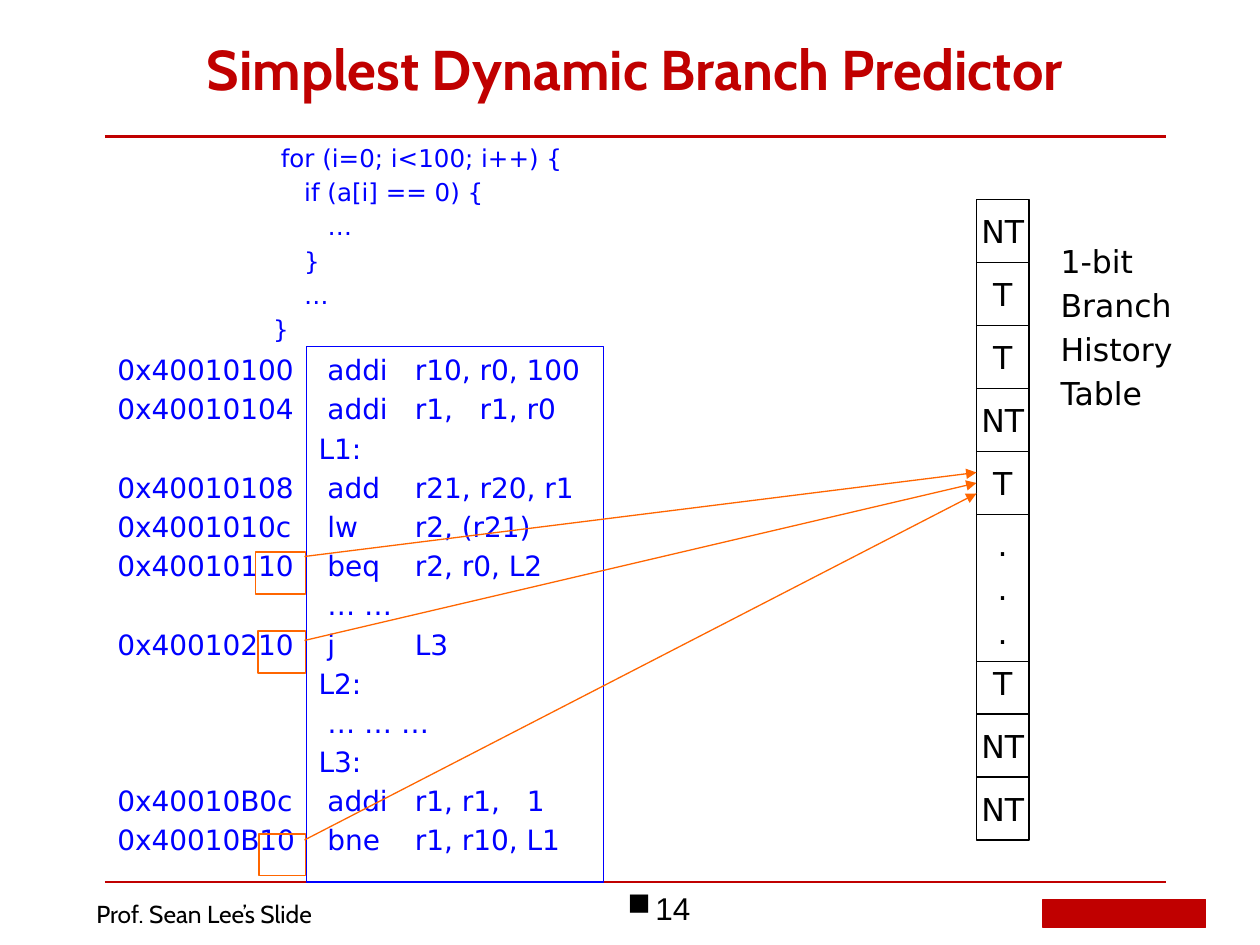
from lxml import etree
from pptx import Presentation
from pptx import util as u
from pptx.dml.color import RGBColor
from pptx.enum import shapes, text
from pptx.oxml import ns

RED = RGBColor(0xC0, 0x00, 0x00)
BLUE = RGBColor(0x00, 0x00, 0xFF)
ORANGE = RGBColor(0xFF, 0x66, 0x00)
BLACK = RGBColor(0x00, 0x00, 0x00)
WHITE = RGBColor(0xFF, 0xFF, 0xFF)

BODY = "DejaVu Sans"
HEADING = "Cabin"
LINE_HEIGHT = 1.2
SPACING = 0.2
SPACE_WIDTH = 4.45
CODE_SIZE = 16
CODE_TABS = (55, 92, 119)
TABLE_LEFT, CELL_WIDTH, CELL_HEIGHT = 558, 30, 36

LOOP = [(1, "for (i=0; i<100; i++) {"), (4, "if (a[i] == 0) {"), (7, "…"),
        (4, "}"), (4, "…"), (0, "}")]
INSTRUCTIONS = [
    " addi\tr10, r0, 100", " addi\tr1,\tr1, r0", "L1:", " add\tr21, r20, r1",
    " lw\tr2, (r21)", " beq\tr2, r0, L2", " … …", " j\tL3", "L2:", " … … …",
    "L3:", " addi\tr1, r1,\t1", " bne\tr1, r10, L1"]
ADDRESSES = {0: "0x40010100", 1: "0x40010104", 3: "0x40010108", 4: "0x4001010c",
             5: "0x40010110", 7: "0x40010210", 11: "0x40010B0c", 12: "0x40010B10"}
BRANCHES = [((146, 315.5, 28.5, 24), 318, 270),
            ((147.5, 360.5, 27, 24), 366, 276),
            ((148, 476.5, 26.5, 24), 480, 282)]


def add_child(parent, tag, **attributes):
    return etree.SubElement(parent, ns.qn(tag), attributes)


def write(shape, lines, size, color, font=BODY, bold=False, align=text.PP_ALIGN.LEFT):
    frame = shape.text_frame
    frame.word_wrap = True
    for index, line in enumerate(lines):
        paragraph = frame.paragraphs[0] if index == 0 else frame.add_paragraph()
        paragraph.text = line
        paragraph.alignment = align
        paragraph.space_before = u.Pt(round(SPACING * size, 2) if index else 0)
        paragraph.font.name = font
        paragraph.font.size = u.Pt(size)
        paragraph.font.bold = bold
        paragraph.font.color.rgb = color
    return frame


def add_text(slide, box, lines, size, color, **style):
    shape = slide.shapes.add_textbox(*map(u.Pt, box))
    return write(shape, lines, size, color, **style)


def add_box(slide, box, line_color, fill=None):
    shape = slide.shapes.add_shape(shapes.MSO_SHAPE.RECTANGLE, *map(u.Pt, box))
    shape.shadow.inherit = False
    if fill is None:
        shape.fill.background()
    else:
        shape.fill.solid()
        shape.fill.fore_color.rgb = fill
    shape.line.color.rgb = line_color
    shape.line.width = u.Pt(0.75)
    return shape


def add_cell(slide, top, lines, height=CELL_HEIGHT):
    shape = add_box(slide, (TABLE_LEFT, top, CELL_WIDTH, height), BLACK, WHITE)
    frame = write(shape, lines, 18, BLACK, align=text.PP_ALIGN.CENTER)
    frame.margin_left = frame.margin_right = 0
    frame.vertical_anchor = text.MSO_ANCHOR.MIDDLE


def add_line(slide, ends, color, width, arrow=False):
    line = slide.shapes.add_connector(shapes.MSO_CONNECTOR.STRAIGHT, *map(u.Pt, ends))
    line.line.color.rgb = color
    line.line.width = u.Pt(width)
    if arrow:
        add_child(line.line._get_or_add_ln(), "a:tailEnd", type="triangle")
    add_child(line._element.spPr, "a:effectLst")


def add_history_table(slide):
    for index, state in enumerate(["NT", "T", "T", "NT", "T"]):
        add_cell(slide, 114 + index * CELL_HEIGHT, [state])
    for index, state in enumerate(["T", "NT", "NT"]):
        add_cell(slide, 372 + index * CELL_HEIGHT, [state])
    add_cell(slide, 294, ["."] * 3, 84)
    add_text(slide, (599, 134.5, 86, 107), ["1-bit", "Branch", "History", "Table"],
             18, BLACK)


def add_loop(slide):
    frame = add_text(slide, (149, 78, 235.5, 126), [line for _, line in LOOP], 14, BLUE)
    for paragraph, (spaces, _) in zip(frame.paragraphs, LOOP):
        properties = paragraph._p.get_or_add_pPr()
        properties.set("marL", str(u.Pt(spaces * SPACE_WIDTH)))
        properties.set("indent", "0")


def add_instructions(slide):
    shape = add_box(slide, (175, 198, 170, 306), BLUE)
    frame = write(shape, INSTRUCTIONS, CODE_SIZE, BLUE)
    frame.vertical_anchor = text.MSO_ANCHOR.TOP
    for paragraph in frame.paragraphs:
        properties = paragraph._p.get_or_add_pPr()
        tabs = etree.Element(ns.qn("a:tabLst"))
        properties.find(ns.qn("a:defRPr")).addprevious(tabs)
        for position in CODE_TABS:
            add_child(tabs, "a:tab", pos=str(u.Pt(position)), algn="l")


def add_addresses(slide):
    frame = add_text(slide, (60, 198, 138, 306), ADDRESSES.values(), CODE_SIZE, BLUE)
    rows = list(ADDRESSES)
    for paragraph, previous, row in zip(frame.paragraphs[1:], rows, rows[1:]):
        skipped = (row - previous - 1) * (LINE_HEIGHT + SPACING)
        paragraph.space_before = u.Pt(round((skipped + SPACING) * CODE_SIZE, 2))


def add_page_number(slide):
    frame = add_text(slide, (262.5, 504.5, 228, 36), ["14"], 18, BLACK, font="Arial",
                     align=text.PP_ALIGN.CENTER)
    properties = frame.paragraphs[0]._p.get_or_add_pPr()
    properties.set("marL", str(u.Pt(16)))
    properties.set("indent", str(-u.Pt(16)))
    bullet = etree.Element(ns.qn("a:buChar"), char="■")
    properties.find(ns.qn("a:defRPr")).addprevious(bullet)


def main():
    """Build the branch predictor slide."""
    presentation = Presentation()
    presentation.slide_width, presentation.slide_height = u.Pt(720), u.Pt(540)
    slide = presentation.slides.add_slide(presentation.slide_layouts[6])
    for top in (78, 504):
        add_line(slide, (60, top, 666, top), RED, 1.5)
    add_box(slide, (596, 514, 93, 16), RED, RED)
    add_page_number(slide)
    title = add_text(slide, (60, 6, 606, 66), ["Simplest Dynamic Branch Predictor"],
                     32, RED, font=HEADING, bold=True, align=text.PP_ALIGN.CENTER)
    title.vertical_anchor = text.MSO_ANCHOR.MIDDLE
    add_history_table(slide)
    add_instructions(slide)
    add_addresses(slide)
    add_loop(slide)
    for box, start, end in BRANCHES:
        add_box(slide, box, ORANGE)
        add_line(slide, (174, start, TABLE_LEFT, end), ORANGE, 0.75, arrow=True)
    add_text(slide, (48, 510, 147, 24.5), ["Prof. Sean Lee’s Slide"], 14, BLACK,
             font=HEADING)
    presentation.save("out.pptx")


if __name__ == "__main__":
    main()
